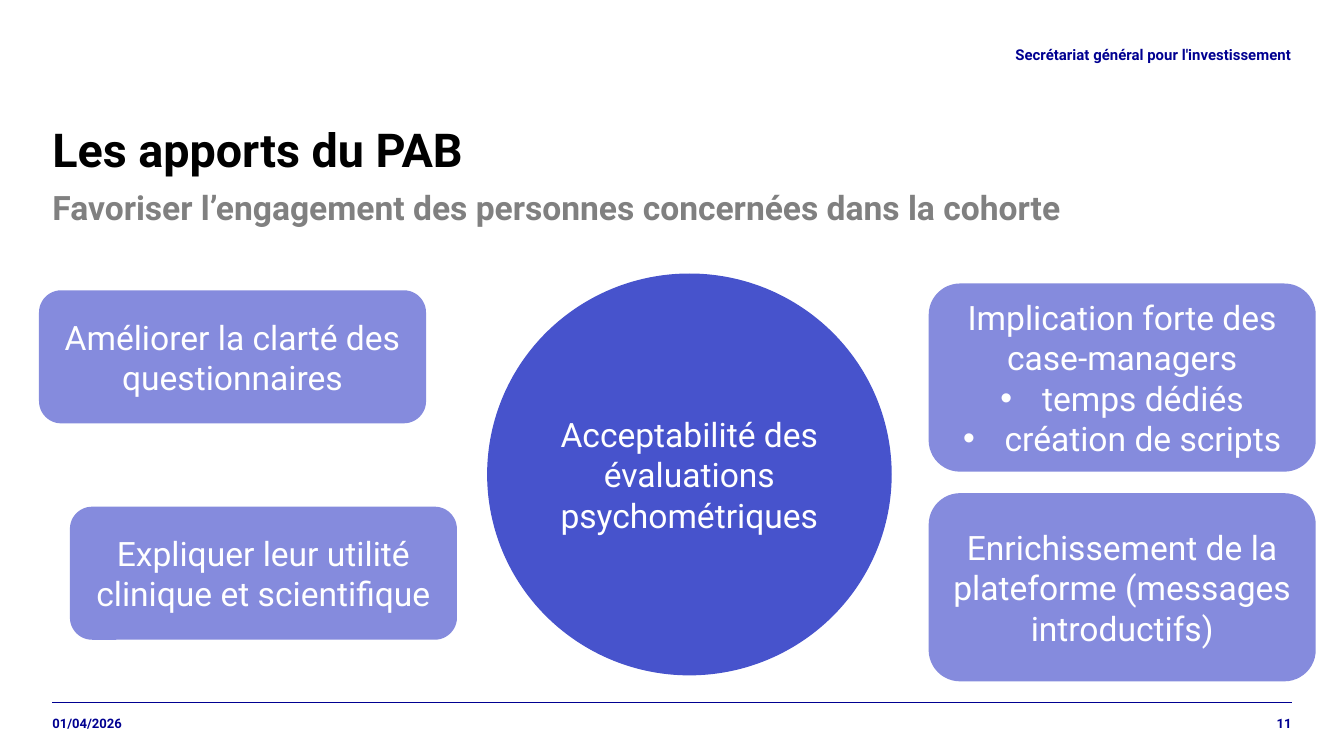
from dataclasses import dataclass

from lxml import etree
from pptx import Presentation
from pptx.dml.color import RGBColor
from pptx.enum.shapes import MSO_CONNECTOR, MSO_SHAPE
from pptx.enum.text import MSO_ANCHOR, MSO_AUTO_SIZE, PP_ALIGN
from pptx.oxml.ns import qn
from pptx.util import Inches, Pt

LEFT, CENTER, RIGHT = PP_ALIGN.LEFT, PP_ALIGN.CENTER, PP_ALIGN.RIGHT
TOP, MIDDLE = MSO_ANCHOR.TOP, MSO_ANCHOR.MIDDLE
FIXED_SIZE = MSO_AUTO_SIZE.NONE
ELLIPSE, ROUNDED = MSO_SHAPE.OVAL, MSO_SHAPE.ROUNDED_RECTANGLE
STRAIGHT = MSO_CONNECTOR.STRAIGHT


@dataclass(frozen=True)
class Theme:
    font: str = "Roboto"
    bullet_font: str = "Arial"
    ink: str = "000000"
    muted: str = "808080"
    navy: str = "000091"
    circle: str = "4753CC"
    card: str = "858BDD"
    white: str = "FFFFFF"
    title: int = 25
    body: int = 18
    header: int = 8
    footer: int = 7


@dataclass(frozen=True)
class Area:
    left: float
    top: float
    width: float
    height: float

    def lengths(self) -> tuple:
        return tuple(Inches(n) for n in (self.left, self.top, self.width, self.height))


@dataclass(frozen=True)
class Bubble:
    area: Area
    text: str
    bullets: tuple[str, ...] = ()
    kind: MSO_SHAPE = ROUNDED
    outlined: bool = False


@dataclass(frozen=True)
class Label:
    area: Area
    text: str
    size: int
    align: PP_ALIGN = LEFT


THEME = Theme()
PAGE_WIDTH = 10
PAGE_HEIGHT = PAGE_WIDTH * 9 / 16
MARGIN = 0.39
RIGHT_EDGE = PAGE_WIDTH - MARGIN
CONTENT_WIDTH = RIGHT_EDGE - MARGIN
FOOTER_TOP, FOOTER_HEIGHT = 5.23, 0.3
CARD_WIDTH, LOW_CARD, TALL_CARD = 2.88, 0.99, 1.4
RIGHT_COLUMN = 6.91

LABELS = (
    Label(Area(MARGIN, FOOTER_TOP, 1.34, FOOTER_HEIGHT), "01/04/2026", THEME.footer),
    Label(Area(1.87, 0.21, RIGHT_EDGE - 1.87, 0.39),
          "Secrétariat général pour l'investissement", THEME.header, RIGHT),
    Label(Area(9.09, FOOTER_TOP, RIGHT_EDGE - 9.09, FOOTER_HEIGHT), "11", THEME.footer, RIGHT),
)
BUBBLES = (
    Bubble(Area(3.63, 2.04, 3, 2.98), "Acceptabilité des évaluations psychométriques",
           kind=ELLIPSE, outlined=True),
    Bubble(Area(0.29, 2.16, CARD_WIDTH, LOW_CARD), "Améliorer la clarté des questionnaires"),
    Bubble(Area(0.52, 3.77, CARD_WIDTH, LOW_CARD),
           "Expliquer leur utilité clinique et scientifique"),
    Bubble(Area(RIGHT_COLUMN, 2.11, CARD_WIDTH, TALL_CARD),
           "Implication forte des case-managers", ("temps dédiés", "création de scripts")),
    Bubble(Area(RIGHT_COLUMN, 3.67, CARD_WIDTH, TALL_CARD),
           "Enrichissement de la plateforme (messages introductifs)"),
)


def color(value: str) -> RGBColor:
    return RGBColor.from_string(value)


def style(para, size: int, ink: str, align: PP_ALIGN, bold: bool = False) -> None:
    para.alignment = align
    for span in para.runs:
        span.font.name = THEME.font
        span.font.size = Pt(size)
        span.font.bold = bold
        span.font.color.rgb = color(ink)


def set_bullet(para, mark: str = "", indent: float = 0) -> None:
    properties = para._p.get_or_add_pPr()
    properties.set("marL", str(Inches(indent)))
    properties.set("indent", str(-Inches(indent)))
    if mark:
        etree.SubElement(properties, qn("a:buFont")).set("typeface", THEME.bullet_font)
        etree.SubElement(properties, qn("a:buChar")).set("char", mark)
    else:
        etree.SubElement(properties, qn("a:buNone"))


def prepare_frame(frame, anchor: MSO_ANCHOR) -> None:
    frame.word_wrap = True
    frame.auto_size = FIXED_SIZE
    frame.vertical_anchor = anchor


def remove_insets(frame) -> None:
    frame.margin_left = frame.margin_top = 0
    frame.margin_right = frame.margin_bottom = 0


def fill_placeholder(box, area: Area, text: str, size: int, ink: str, spacing: float) -> None:
    box.left, box.top, box.width, box.height = area.lengths()
    prepare_frame(box.text_frame, TOP)
    remove_insets(box.text_frame)
    box.text_frame.text = text
    para = box.text_frame.paragraphs[0]
    set_bullet(para)
    para.line_spacing = spacing
    para.space_before = Pt(0)
    style(para, size, ink, LEFT, bold=True)


def draw_label(slide, label: Label) -> None:
    frame = slide.shapes.add_textbox(*label.area.lengths()).text_frame
    prepare_frame(frame, MIDDLE)
    remove_insets(frame)
    frame.text = label.text
    style(frame.paragraphs[0], label.size, THEME.navy, label.align, bold=True)


def draw_bubble(slide, bubble: Bubble) -> None:
    shape = slide.shapes.add_shape(bubble.kind, *bubble.area.lengths())
    shape.shadow.inherit = False
    shape.fill.solid()
    shape.fill.fore_color.rgb = color(THEME.circle if bubble.outlined else THEME.card)
    if bubble.outlined:
        shape.line.color.rgb = color(THEME.circle)
        shape.line.width = Pt(0.75)
    else:
        shape.line.fill.background()
    frame = shape.text_frame
    prepare_frame(frame, MIDDLE)
    frame.text = bubble.text
    for text in bubble.bullets:
        para = frame.add_paragraph()
        para.text = text
        set_bullet(para, "•", 0.31)
    for para in frame.paragraphs:
        style(para, THEME.body, THEME.white, CENTER)


def draw_footer_rule(slide) -> None:
    rule = slide.shapes.add_connector(
        STRAIGHT, Inches(MARGIN), Inches(FOOTER_TOP), Inches(RIGHT_EDGE), Inches(FOOTER_TOP))
    rule.line.color.rgb = color(THEME.navy)
    rule.line.width = Pt(0.5)
    etree.SubElement(rule._element.spPr, qn("a:effectLst"))


def main() -> None:
    deck = Presentation()
    deck.slide_width, deck.slide_height = Inches(PAGE_WIDTH), Inches(PAGE_HEIGHT)
    page = deck.slides.add_slide(deck.slide_layouts[1])
    fill_placeholder(page.shapes.title, Area(MARGIN, 0.95, CONTENT_WIDTH, 0.59),
                     "Les apports du PAB", THEME.title, THEME.ink, 0.9)
    fill_placeholder(page.placeholders[1], Area(MARGIN, 1.39, CONTENT_WIDTH, 0.49),
                     "Favoriser l’engagement des personnes concernées dans la cohorte",
                     THEME.body, THEME.muted, 1.0)
    draw_footer_rule(page)
    for label in LABELS:
        draw_label(page, label)
    for bubble in BUBBLES:
        draw_bubble(page, bubble)
    deck.save("out.pptx")


if __name__ == "__main__":
    main()
